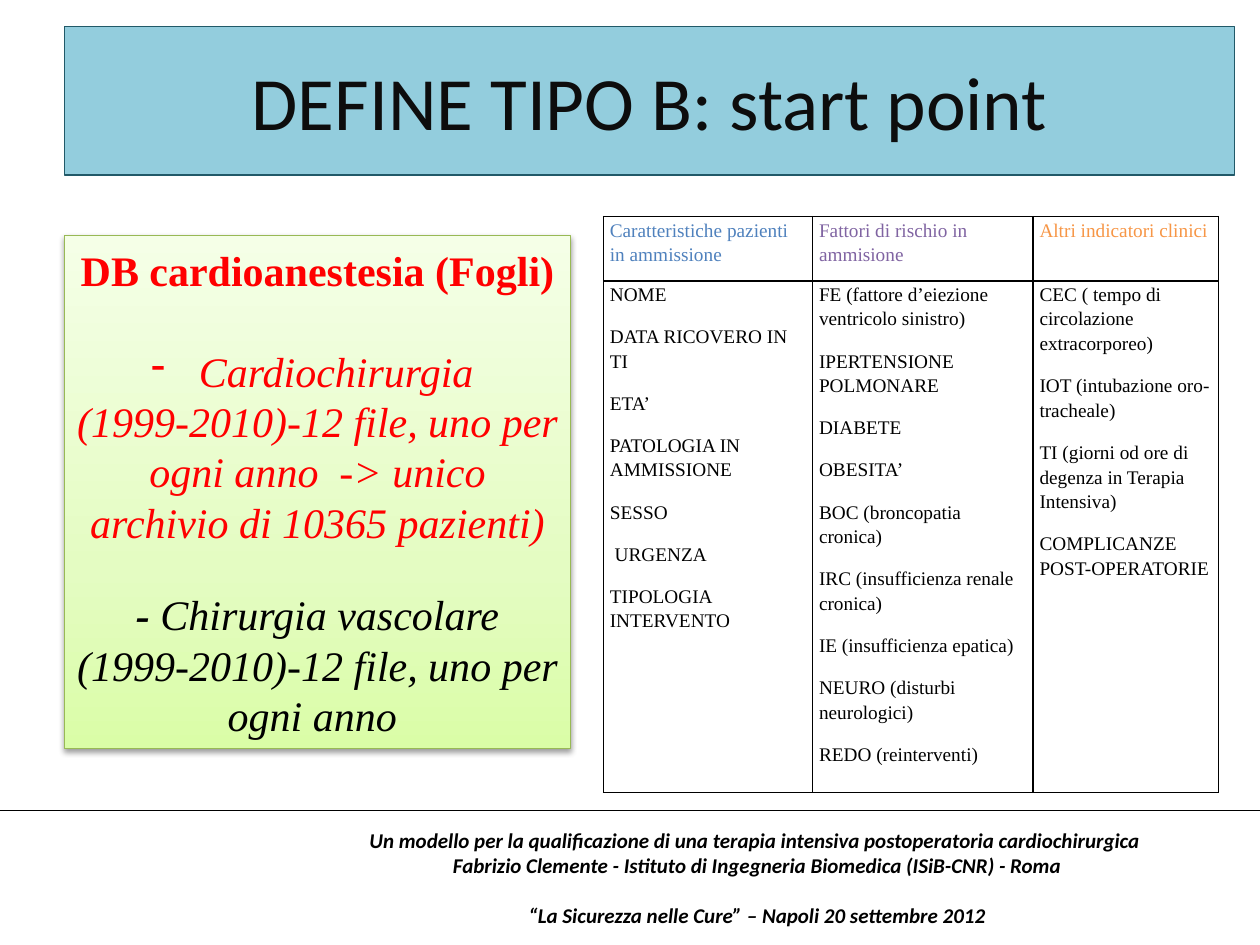
import pptx
import pptx.dml.color
import pptx.enum.shapes
import pptx.enum.text
import pptx.oxml
import pptx.oxml.ns
import pptx.util
import lxml.etree

Inches = pptx.util.Inches
Pt = pptx.util.Pt
CENTER = pptx.enum.text.PP_ALIGN.CENTER
MIDDLE = pptx.enum.text.MSO_ANCHOR.MIDDLE
NAMESPACE = pptx.oxml.ns.nsdecls("a")

COLORS = {
    "black": "000000",
    "title_text": "0D0D0D",
    "title_fill": "93CDDD",
    "title_line": "215968",
    "red": "FF0000",
    "panel_line": "98B955",
    "panel_bottom": "DAFDA7",
    "panel_middle": "E4FCC2",
    "panel_top": "F5FFE7",
    "blue": "4F81BD",
    "purple": "8064A2",
    "orange": "F79646",
}

INDICATORS = [
    ("Caratteristiche pazienti in ammissione", "blue", 1.66, [
        "NOME", "DATA RICOVERO IN TI", "ETA’", "PATOLOGIA IN AMMISSIONE",
        "SESSO", " URGENZA", "TIPOLOGIA INTERVENTO"]),
    ("Fattori di rischio in ammisione", "purple", 1.75, [
        "FE (fattore d’eiezione ventricolo sinistro)",
        "IPERTENSIONE POLMONARE", "DIABETE", "OBESITA’",
        "BOC (broncopatia cronica)", "IRC (insufficienza renale cronica)",
        "IE (insufficienza epatica)", "NEURO (disturbi neurologici)",
        "REDO (reinterventi)"]),
    ("Altri indicatori clinici", "orange", 1.47, [
        "CEC ( tempo di circolazione extracorporeo)",
        "IOT (intubazione oro-tracheale)",
        "TI (giorni od ore di degenza in Terapia Intensiva)",
        "COMPLICANZE POST-OPERATORIE"]),
]


def rgb(name):
    return pptx.dml.color.RGBColor.from_string(COLORS[name])


def style(font, face, size, color, bold=False, italic=False):
    font.name = face
    font.size = Pt(size)
    font.color.rgb = rgb(color)
    font.bold = bold
    font.italic = italic


def add_paragraph(frame, index):
    return frame.paragraphs[0] if index == 0 else frame.add_paragraph()


def add_title(page, left, top, width, height):
    title = page.shapes.title
    title.left, title.top, title.width, title.height = left, top, width, height
    title.fill.solid()
    title.fill.fore_color.rgb = rgb("title_fill")
    title.line.color.rgb = rgb("title_line")
    title.line.width = Pt(0.75)
    frame = title.text_frame
    frame.text = "DEFINE TIPO B: start point"
    frame.auto_size = pptx.enum.text.MSO_AUTO_SIZE.NONE
    frame.vertical_anchor = MIDDLE
    frame.paragraphs[0].alignment = CENTER
    style(frame.paragraphs[0].font, "Calibri", 43, "title_text")


def paint_panel(panel):
    stops = [(0, "panel_bottom"), (35, "panel_middle"), (100, "panel_top")]
    stop_xml = "".join(
        f'<a:gs pos="{place * 1000}"><a:srgbClr val="{COLORS[name]}"/></a:gs>'
        for place, name in stops)
    panel.fill.gradient()
    properties = panel._element.spPr
    gradient = properties.find(pptx.oxml.ns.qn("a:gradFill"))
    properties.replace(gradient, pptx.oxml.parse_xml(
        f'<a:gradFill {NAMESPACE} rotWithShape="1"><a:gsLst>{stop_xml}</a:gsLst>'
        '<a:lin ang="16200000" scaled="0"/></a:gradFill>'))
    panel.line.color.rgb = rgb("panel_line")
    panel.line.width = Pt(0.75)
    panel.shadow.inherit = False
    properties.find(pptx.oxml.ns.qn("a:effectLst")).append(pptx.oxml.parse_xml(
        f'<a:outerShdw {NAMESPACE} blurRad="{Pt(3.1)}" dist="{Pt(1.6)}" '
        f'dir="5400000" rotWithShape="0"><a:srgbClr val="{COLORS["black"]}">'
        '<a:alpha val="38000"/></a:srgbClr></a:outerShdw>'))


def add_database_panel(page, left, top, width, height):
    panel = page.shapes.add_shape(
        pptx.enum.shapes.MSO_SHAPE.RECTANGLE, left, top, width, height)
    paint_panel(panel)
    frame = panel.text_frame
    frame.word_wrap = True
    frame.vertical_anchor = MIDDLE
    lines = [
        ("DB cardioanestesia (Fogli)", "red", 0),
        ("Cardiochirurgia ", "red", 29),
        ("(1999-2010)-12 file, uno per ogni anno  -> unico archivio "
         "di 10365 pazienti)", "red", 0),
        ("- ", "black", 24),
    ]
    for index, (text, color, gap) in enumerate(lines):
        para = add_paragraph(frame, index)
        if index == 1:
            settings = para._p.get_or_add_pPr()
            settings.set("marL", str(Inches(0.38)))
            settings.set("indent", str(Inches(-0.38)))
            bullet = lxml.etree.SubElement(settings, pptx.oxml.ns.qn("a:buChar"))
            bullet.set("char", "-")
        para.add_run().text = text
        para.alignment = CENTER
        if gap:
            para.space_before = Pt(gap)
        style(para.font, "Times New Roman", 24, color,
              bold=index == 0, italic=index > 0)
    para.runs[0].font.bold = True
    span = para.add_run()
    span.text = "Chirurgia vascolare (1999-2010)-12 file, uno per ogni anno "


def fill_cell(cell, lines, color):
    cell.fill.background()
    cell.margin_left = cell.margin_right = Inches(0.05)
    cell.margin_top = cell.margin_bottom = 0
    for index, text in enumerate(lines):
        para = add_paragraph(cell.text_frame, index)
        para.text = text
        para.line_spacing = 1.15
        para.space_after = Pt(10)
        style(para.font, "Times New Roman", 11, color)
    properties = cell._tc.get_or_add_tcPr()
    for index, side in enumerate(["lnL", "lnR", "lnT", "lnB"]):
        properties.insert(index, pptx.oxml.parse_xml(
            f'<a:{side} {NAMESPACE} w="{Pt(1)}"><a:solidFill>'
            f'<a:srgbClr val="{COLORS["black"]}"/></a:solidFill></a:{side}>'))


def add_indicator_table(page, left, top, width, height):
    table = page.shapes.add_table(
        2, len(INDICATORS), left, top, width, height).table
    table.first_row = False
    table.horz_banding = False
    table.rows[0].height = Inches(0.51)
    table.rows[1].height = height - Inches(0.51)
    for column, (heading, color, breadth, items) in enumerate(INDICATORS):
        table.columns[column].width = Inches(breadth)
        fill_cell(table.cell(0, column), [heading], color)
        fill_cell(table.cell(1, column), items, "black")


def add_footer(page, left, top, width, height):
    rule = page.shapes.add_connector(
        pptx.enum.shapes.MSO_CONNECTOR.STRAIGHT, 0, top, Inches(10), top)
    rule.line.color.rgb = rgb("black")
    rule.line.width = Pt(0.75)
    lxml.etree.SubElement(rule._element.spPr, pptx.oxml.ns.qn("a:effectLst"))
    frame = page.shapes.add_textbox(left, top, width, height).text_frame
    frame.word_wrap = True
    frame.vertical_anchor = MIDDLE
    lines = [
        "Un modello per la qualificazione di una terapia intensiva "
        "postoperatoria cardiochirurgica ",
        "Fabrizio Clemente - Istituto di Ingegneria Biomedica (ISiB-CNR) - Roma",
        "“La Sicurezza nelle Cure” – Napoli 20 settembre 2012",
    ]
    for index, text in enumerate(lines):
        para = add_paragraph(frame, index)
        para.text = text
        para.alignment = CENTER
        style(para.font, "Calibri", 12, "black", bold=True, italic=True)
    para.space_before = Pt(14.5)


def main():
    deck = pptx.Presentation()
    deck.slide_width = Inches(10)
    deck.slide_height = Inches(7.5)
    page = deck.slides.add_slide(deck.slide_layouts[5])
    add_title(page, Inches(0.51), Inches(0.21), Inches(9.29), Inches(1.18))
    add_database_panel(
        page, Inches(0.51), Inches(1.87), Inches(4.02), Inches(4.07))
    add_indicator_table(
        page, Inches(4.79), Inches(1.72), Inches(4.88), Inches(4.57))
    add_footer(page, Inches(2.72), Inches(6.43), Inches(6.58), Inches(1.07))
    deck.save("out.pptx")


if __name__ == "__main__":
    main()
